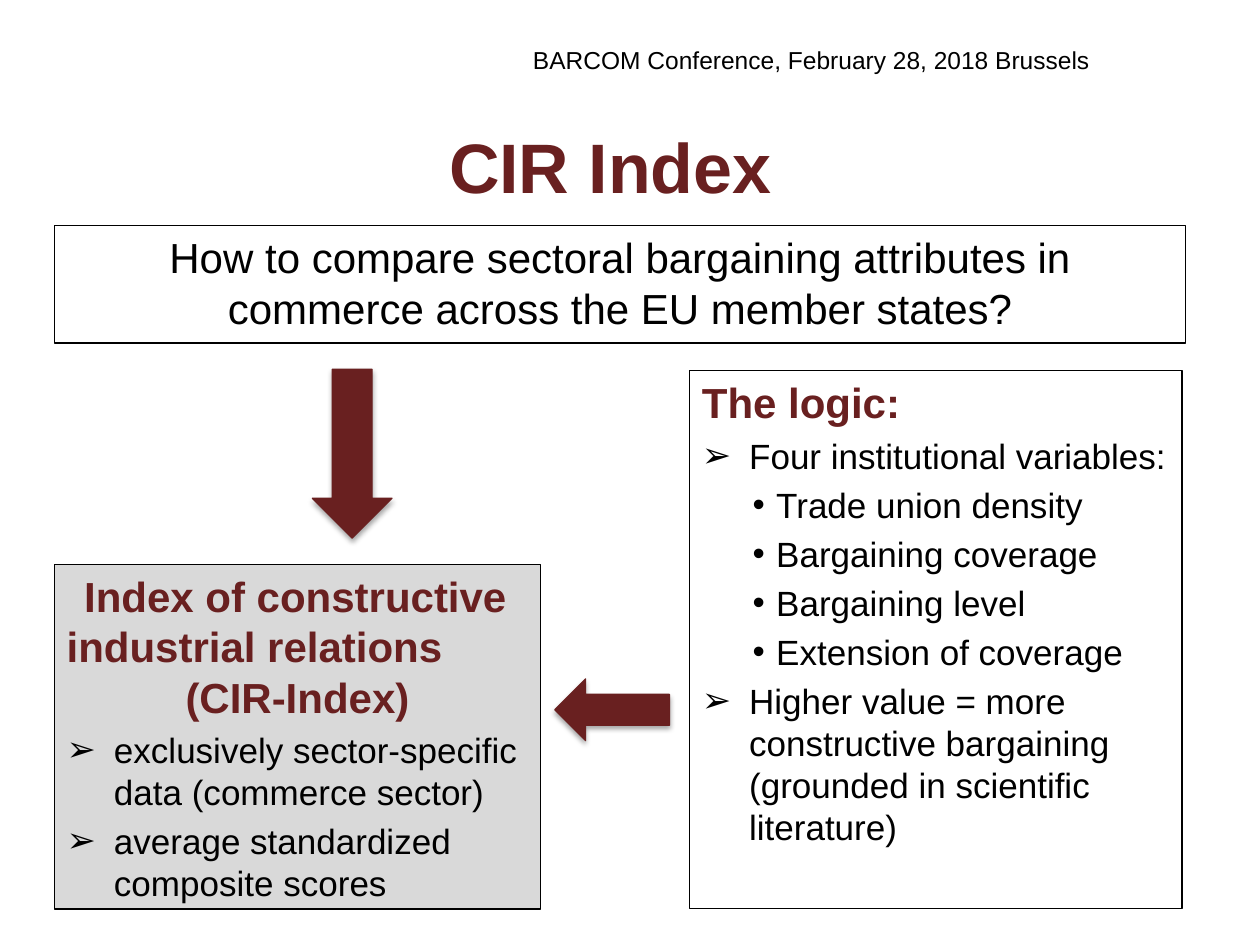
from lxml import etree
from pptx import Presentation
from pptx import util as u
from pptx.dml.color import RGBColor
from pptx.enum import shapes, text
from pptx.oxml import ns

COLOURS = {"maroon": "692020", "black": "000000", "grey": "D9D9D9"}
CENTRE, LEFT = text.PP_ALIGN.CENTER, text.PP_ALIGN.LEFT
# Bullet character, left margin and hanging indent in points
ARROW_BULLET = ("➢", 27, 27)
DOT_BULLET = ("•", 42.5, 13.5)


def rgb(name):
    return RGBColor.from_string(COLOURS[name])


def add_element(parent, tag, **attributes):
    return etree.SubElement(parent, ns.qn(tag), attributes)


class SlideBuilder:
    font_name = "Arial"
    line_width = 0.75

    def __init__(self, slide):
        self.slide = slide

    def paragraph(self, frame, content, size, colour="black", bold=False,
                  align=LEFT, bullet=None, first_indent=0, before=None):
        first = not frame.paragraphs[0].runs
        paragraph = frame.paragraphs[0] if first else frame.add_paragraph()
        paragraph.text = content
        paragraph.alignment = align
        properties = paragraph._p.get_or_add_pPr()
        if first_indent:
            properties.set("indent", str(u.Pt(first_indent)))
        if not first:
            paragraph.space_before = u.Pt(0.2 * size if before is None else before)
        if bullet:
            character, margin, hanging = bullet
            properties.set("marL", str(u.Pt(margin)))
            properties.set("indent", str(-u.Pt(hanging)))
            add_element(properties, "a:buFont", typeface=self.font_name)
            add_element(properties, "a:buChar", char=character)
        font = paragraph.font
        font.name, font.size, font.bold = self.font_name, u.Pt(size), bold
        font.color.rgb = rgb(colour)

    def label(self, left, top, width, height, content, size, **style):
        shape = self.slide.shapes.add_textbox(*map(u.Pt, (left, top, width, height)))
        frame = shape.text_frame
        frame.word_wrap = True
        frame.vertical_anchor = text.MSO_ANCHOR.MIDDLE
        self.paragraph(frame, content, size, **style)

    def preset(self, kind, left, top, width, height, fill, line):
        shape = self.slide.shapes.add_shape(
            kind, *map(u.Pt, (left, top, width, height)))
        shape.shadow.inherit = False
        if fill:
            shape.fill.solid()
            shape.fill.fore_color.rgb = rgb(fill)
        else:
            shape.fill.background()
        shape.line.color.rgb = rgb(line)
        shape.line.width = u.Pt(self.line_width)
        return shape

    def box(self, left, top, width, height, fill=None):
        shape = self.preset(shapes.MSO_SHAPE.RECTANGLE, left, top, width, height,
                            fill, "black")
        frame = shape.text_frame
        frame.word_wrap = True
        frame.vertical_anchor = text.MSO_ANCHOR.TOP
        return frame

    def block_arrow(self, kind, left, top, width, height):
        shape = self.preset(kind, left, top, width, height, "maroon", "maroon")
        effects = shape._element.spPr.find(ns.qn("a:effectLst"))
        shadow = add_element(effects, "a:outerShdw", blurRad=str(u.Pt(3.1)),
                             dist=str(u.Pt(1.8)), dir="5400000", rotWithShape="0")
        colour = add_element(shadow, "a:srgbClr", val=COLOURS["black"])
        add_element(colour, "a:alpha", val="35000")


def main():
    presentation = Presentation()
    presentation.slide_width, presentation.slide_height = u.Pt(720), u.Pt(540)
    slide = presentation.slides.add_slide(presentation.slide_layouts[6])
    builder = SlideBuilder(slide)
    heading = {"size": 24, "colour": "maroon", "bold": True}

    # Title and conference line
    builder.label(20, 59, 657.5, 71.5, "CIR Index", 40,
                  colour="maroon", bold=True, align=CENTRE)
    builder.label(297.5, 21.75, 352, 24.25,
                  "BARCOM Conference, February 28, 2018 Brussels", 14)

    # Question
    question = builder.box(31, 129, 646.5, 67)
    builder.paragraph(question, "How to compare sectoral bargaining attributes in "
                      "commerce across the EU member states?", 24, align=CENTRE)

    # Index
    builder.block_arrow(shapes.MSO_SHAPE.DOWN_ARROW, 178.5, 211, 45.5, 96.5)
    index = builder.box(31, 322.5, 278, 197, fill="grey")
    builder.paragraph(index, "Index of constructive industrial relations",
                      first_indent=10, **heading)
    builder.paragraph(index, "(CIR-Index)", align=CENTRE, before=0, **heading)
    for content in ("exclusively sector-specific data (commerce sector)",
                    "average standardized composite scores"):
        builder.paragraph(index, content, 20, bullet=ARROW_BULLET)

    # Logic
    logic = builder.box(394, 211.75, 281.5, 307.5)
    builder.paragraph(logic, "The logic:", **heading)
    for content, bullet in (
            ("Four institutional variables:", ARROW_BULLET),
            ("Trade union density", DOT_BULLET),
            ("Bargaining coverage", DOT_BULLET),
            ("Bargaining level", DOT_BULLET),
            ("Extension of coverage", DOT_BULLET),
            ("Higher value = more constructive bargaining "
             "(grounded in scientific literature)", ARROW_BULLET)):
        builder.paragraph(logic, content, 20, bullet=bullet)
    builder.block_arrow(shapes.MSO_SHAPE.LEFT_ARROW, 317, 388, 65.5, 35.25)

    presentation.save("out.pptx")


if __name__ == "__main__":
    main()
